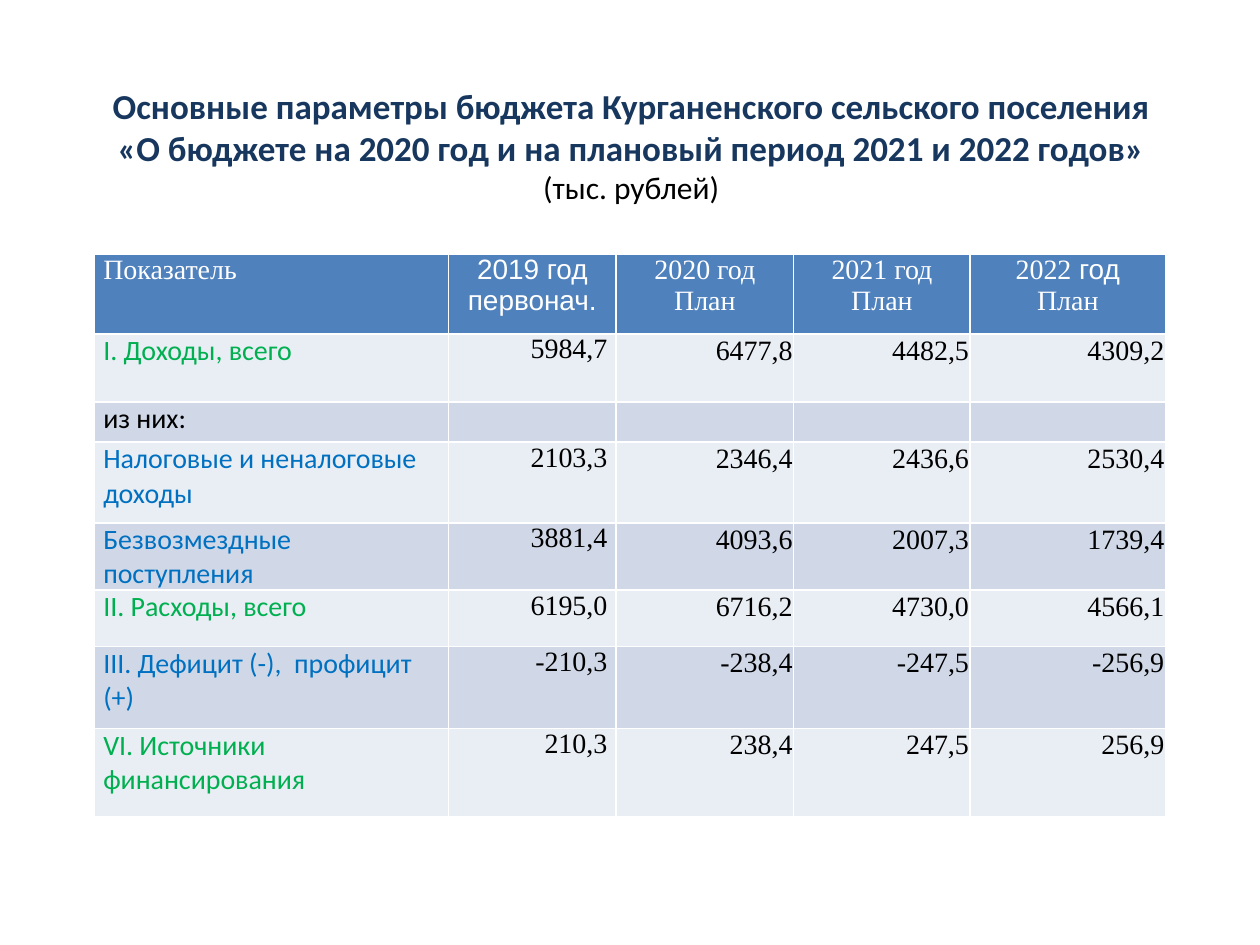
"""Build a slide with the main budget parameters of a rural settlement."""
from pptx import Presentation
from pptx.dml.color import RGBColor
from pptx.enum.text import MSO_ANCHOR as Anchor, PP_ALIGN as Align
from pptx.util import Inches, Pt

COLORS = {
    "navy": "17375E", "black": "000000", "white": "FFFFFF", "green": "00B050",
    "blue": "0070C0", "header": "4F81BD", "light": "E9EDF4", "dark": "D0D8E8",
}
SERIF, SANS, BODY = "Times New Roman", "Arial", "Calibri"

TITLE = [
    ("Основные параметры бюджета Курганенского сельского поселения\n"
     "«О бюджете на 2020 год и на плановый период 2021 и 2022 годов»\n",
     dict(size=20, color="navy", bold=True)),
    ("(тыс. рублей)", dict(size=18)),
]
HEADINGS = [
    [[("Показатель", SERIF)]],
    [[("2019 год первонач.", SANS)]],
    [[("2020 год", SERIF)], [("План", SERIF)]],
    [[("2021 год", SERIF)], [("План", SERIF)]],
    [[("2022", SERIF), (" год", SANS)], [("План", SERIF)]],
]
INDICATORS = [
    ("I. Доходы, всего", "green", ["5984,7", "6477,8", "4482,5", "4309,2"]),
    ("из них:", "black", ["", "", "", ""]),
    ("Налоговые и неналоговые доходы", "blue", ["2103,3", "2346,4", "2436,6", "2530,4"]),
    ("Безвозмездные поступления", "blue", ["3881,4", "4093,6", "2007,3", "1739,4"]),
    ("II. Расходы, всего", "green", ["6195,0", "6716,2", "4730,0", "4566,1"]),
    ("III. Дефицит (-),  профицит (+)", "blue", ["-210,3", "-238,4", "-247,5", "-256,9"]),
    ("VI. Источники финансирования", "green", ["210,3", "238,4", "247,5", "256,9"]),
]
COLUMN_WIDTHS = [2.81, 1.33, 1.41, 1.4, 1.55]
ROW_HEIGHTS = [0.63, 0.54, 0.32, 0.64, 0.46, 0.45, 0.65, 0.7]


def rgb(name):
    return RGBColor.from_string(COLORS[name])


def write(paragraph, text, font=BODY, size=16, color="black", bold=False, align=Align.LEFT):
    paragraph.alignment = align
    for index, line in enumerate(text.split("\n")):
        if index:
            paragraph.add_line_break()
        if line:
            run = paragraph.add_run()
            run.text = line
            run.font.name, run.font.size, run.font.bold = font, Pt(size), bold
            run.font.color.rgb = rgb(color)


def prepare(cell, fill, side=0.07, top=0):
    cell.fill.solid()
    cell.fill.fore_color.rgb = rgb(fill)
    cell.margin_left = cell.margin_right = Inches(side)
    cell.margin_top, cell.margin_bottom = Inches(top), 0
    return cell.text_frame


def add_title(slide):
    frame = slide.shapes.add_textbox(Inches(0.51), Inches(0.44), Inches(9), Inches(1.42)).text_frame
    frame.word_wrap = True
    frame.vertical_anchor = Anchor.MIDDLE
    for text, style in TITLE:
        write(frame.paragraphs[0], text, align=Align.CENTER, **style)


def add_budget(slide):
    budget = slide.shapes.add_table(
        len(ROW_HEIGHTS), len(COLUMN_WIDTHS), Inches(0.75), Inches(2.02),
        Inches(sum(COLUMN_WIDTHS)), Inches(sum(ROW_HEIGHTS))).table
    budget.first_row = budget.horz_banding = False
    for column, width in zip(budget.columns, COLUMN_WIDTHS):
        column.width = Inches(width)
    for row, height in zip(budget.rows, ROW_HEIGHTS):
        row.height = Inches(height)

    for col, heading in enumerate(HEADINGS):
        frame = prepare(budget.cell(0, col), "header")
        for index, line in enumerate(heading):
            paragraph = frame.add_paragraph() if index else frame.paragraphs[0]
            for text, font in line:
                write(paragraph, text, font=font, color="white",
                      align=Align.CENTER if col else Align.LEFT)

    for row, (indicator, color, amounts) in enumerate(INDICATORS, 1):
        band = "light" if row % 2 else "dark"
        write(prepare(budget.cell(row, 0), band).paragraphs[0], indicator, color=color)
        for col, amount in enumerate(amounts, 1):
            insets = dict(side=0.01, top=0.01) if col > 1 else {}
            frame = prepare(budget.cell(row, col), band, **insets)
            write(frame.paragraphs[0], amount, font=SERIF, align=Align.RIGHT)


def main():
    deck = Presentation()
    deck.slide_width, deck.slide_height = Inches(10), Inches(7.5)
    slide = deck.slides.add_slide(deck.slide_layouts[6])
    add_title(slide)
    add_budget(slide)
    deck.save("out.pptx")


if __name__ == "__main__":
    main()
